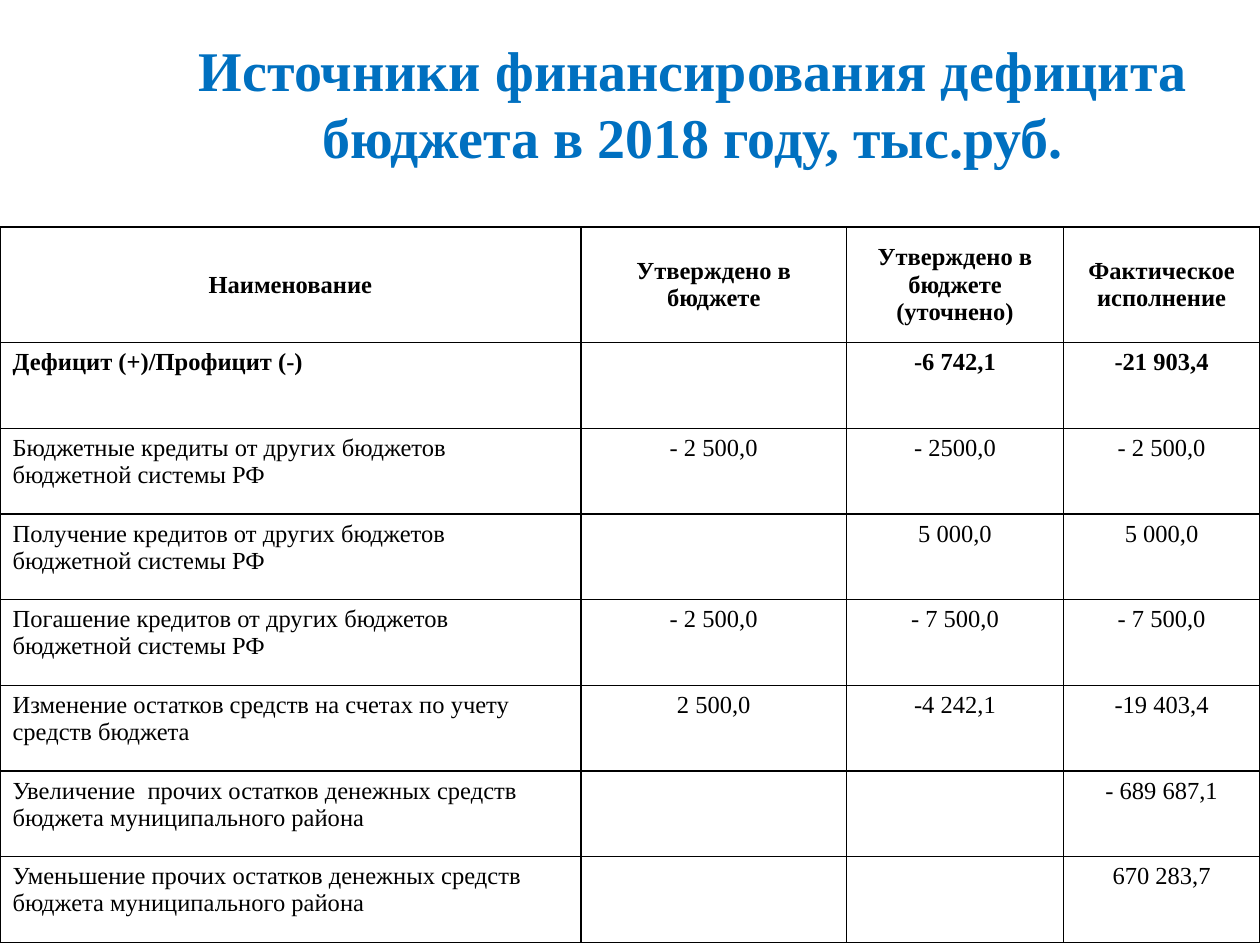
from dataclasses import dataclass

import pptx
import pptx.dml.color
import pptx.enum.text
import pptx.oxml
import pptx.oxml.ns
import pptx.util

Inches, Pt = pptx.util.Inches, pptx.util.Pt
Align, Anchor = pptx.enum.text.PP_ALIGN, pptx.enum.text.MSO_ANCHOR

COLORS = {"title": "0070C0", "text": "000000", "fill": "FFFFFF", "border": "000000"}
FONT = "Times New Roman"
WIDTH, HEIGHT = 10, 7.5
TABLE_TOP = 0.24 * HEIGHT
COLUMN_SHARES = (0.461, 0.211, 0.172, 0.156)
HEADER_HEIGHT, ROW_HEIGHT = 0.92, 0.68
FILL_OPACITY = 55000

TITLE = ("Источники финансирования дефицита", "бюджета в 2018 году, тыс.руб.")
HEADERS = ("Наименование", "Утверждено в бюджете",
           "Утверждено в бюджете (уточнено)", "Фактическое исполнение")


@dataclass
class BudgetRow:
    name: str
    approved: str
    revised: str
    actual: str
    bold: bool = False


ROWS = (
    BudgetRow("Дефицит (+)/Профицит (-)", "", "-6 742,1", "-21 903,4", True),
    BudgetRow("Бюджетные кредиты от других бюджетов бюджетной системы РФ",
              "- 2 500,0", "- 2500,0", "- 2 500,0"),
    BudgetRow("Получение кредитов от других бюджетов бюджетной системы РФ",
              "", "5 000,0", "5 000,0"),
    BudgetRow("Погашение кредитов от других бюджетов бюджетной системы РФ",
              "- 2 500,0", "- 7 500,0", "- 7 500,0"),
    BudgetRow("Изменение остатков средств на счетах по учету средств бюджета",
              "2 500,0", "-4 242,1", "-19 403,4"),
    BudgetRow("Увеличение  прочих остатков денежных средств бюджета муниципального района",
              "", "", "- 689 687,1"),
    BudgetRow("Уменьшение прочих остатков денежных средств бюджета муниципального района",
              "", "", "670 283,7"),
)


def add_span(para, text: str, size: float, color: str, bold: bool) -> None:
    span = para.add_run()
    span.text = text
    span.font.name = FONT
    span.font.size = Pt(size)
    span.font.bold = bold
    span.font.color.rgb = pptx.dml.color.RGBColor.from_string(COLORS[color])


def add_title(page) -> None:
    box = page.shapes.add_textbox(Inches(1.48), Inches(0.23), Inches(8.13), Inches(1.18))
    frame = box.text_frame
    frame.word_wrap = False
    frame.auto_size = pptx.enum.text.MSO_AUTO_SIZE.SHAPE_TO_FIT_TEXT
    for index, line in enumerate(TITLE):
        para = frame.add_paragraph() if index else frame.paragraphs[0]
        para.alignment = Align.CENTER if index else Align.LEFT
        add_span(para, line, 32, "title", True)


def style_cell(cell, filled: bool) -> None:
    """Draw the four borders, then the translucent fill or none."""
    properties = cell._tc.get_or_add_tcPr()
    for side in ("lnL", "lnR", "lnT", "lnB"):
        properties.append(pptx.oxml.parse_xml(
            f'<a:{side} {pptx.oxml.ns.nsdecls("a")} w="{Pt(1)}"><a:solidFill>'
            f'<a:srgbClr val="{COLORS["border"]}"/></a:solidFill></a:{side}>'))
    if not filled:
        cell.fill.background()
        return
    cell.fill.solid()
    cell.fill.fore_color.rgb = pptx.dml.color.RGBColor.from_string(COLORS["fill"])
    color = properties.find(".//" + pptx.oxml.ns.qn("a:solidFill") + "[last()]")
    color = properties.find(pptx.oxml.ns.qn("a:solidFill"))[0]
    color.append(pptx.oxml.parse_xml(
        f'<a:alpha {pptx.oxml.ns.nsdecls("a")} val="{FILL_OPACITY}"/>'))


def fill_cell(cell, text: str, bold: bool, centered: bool, header: bool) -> None:
    cell.vertical_anchor = Anchor.MIDDLE if header else Anchor.TOP
    para = cell.text_frame.paragraphs[0]
    para.alignment = Align.CENTER if centered else Align.LEFT
    if text:
        add_span(para, text, 14, "text", bold)
    else:
        para.font.size = Pt(14)


def add_budget_table(page) -> None:
    height = HEADER_HEIGHT + ROW_HEIGHT * len(ROWS)
    table = page.shapes.add_table(len(ROWS) + 1, len(HEADERS), 0, Inches(TABLE_TOP),
                                  Inches(WIDTH), Inches(height)).table
    table.first_row = table.horz_banding = False
    for column, share in zip(table.columns, COLUMN_SHARES):
        column.width = Inches(WIDTH * share)
    for index, row in enumerate(table.rows):
        row.height = Inches(ROW_HEIGHT if index else HEADER_HEIGHT)

    lines = [(HEADERS, True)]
    lines += [((row.name, row.approved, row.revised, row.actual), row.bold) for row in ROWS]
    for row_index, (texts, bold) in enumerate(lines):
        header = row_index == 0
        for column_index, text in enumerate(texts):
            cell = table.cell(row_index, column_index)
            style_cell(cell, filled=not header or column_index > 0)
            fill_cell(cell, text, bold, header or column_index > 0, header)


def main() -> None:
    deck = pptx.Presentation()
    deck.slide_width, deck.slide_height = Inches(WIDTH), Inches(HEIGHT)
    page = deck.slides.add_slide(deck.slide_layouts[6])
    add_title(page)
    add_budget_table(page)
    deck.save("out.pptx")


if __name__ == "__main__":
    main()
